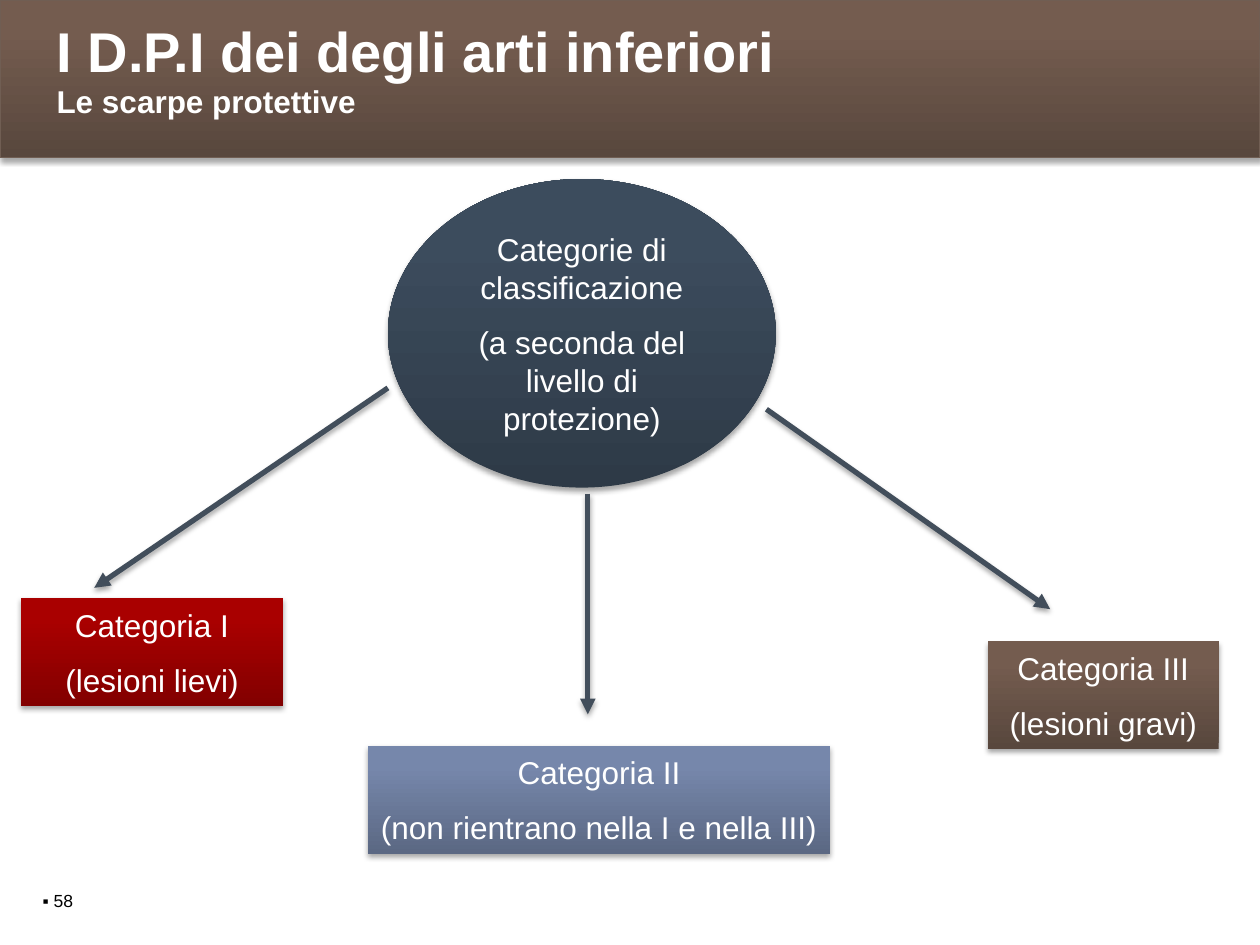
from lxml.etree import SubElement
from pptx import Presentation
from pptx.dml.color import RGBColor
from pptx.enum.shapes import MSO_CONNECTOR, MSO_SHAPE
from pptx.enum.text import MSO_ANCHOR, MSO_AUTO_SIZE, PP_ALIGN
from pptx.oxml.ns import qn
from pptx.util import Cm, Pt

BROWN = ("58473D", "745C4F")
SLATE = ("2E3A47", "3C4C5D")
RED = ("820000", "A90000")
BLUE = ("5B6883", "7687AB")
ARROW = "424E5B"
BODY = dict(name="Arial", size=Pt(18), color="FFFFFF")


def rgb(value):
    return RGBColor.from_string(value)


def set_font(font, **values):
    color = values.pop("color")
    for key, value in values.items():
        setattr(font, key, value)
    font.color.rgb = rgb(color)


def add_shadow(shape):
    """Soft shadow falling straight down."""
    spPr = shape._element.spPr
    effects = spPr.find(qn("a:effectLst"))
    if effects is None:
        effects = SubElement(spPr, qn("a:effectLst"))
    outer = SubElement(effects, qn("a:outerShdw"), blurRad=str(Pt(3.1)),
                       dist=str(Pt(1.8)), dir="5400000", rotWithShape="0")
    color = SubElement(outer, qn("a:srgbClr"), val="000000")
    SubElement(color, qn("a:alpha"), val="35000")


def add_panel(s, kind, box, colors):
    """Shape shaded from a dark bottom to a light top."""
    sp = s.shapes.add_shape(kind, *map(Cm, box))
    sp.fill.gradient()
    sp.fill.gradient_angle = 90
    for stop, color, position in zip(sp.fill.gradient_stops, colors, (0, 0.8)):
        stop.color.rgb = rgb(color)
        stop.position = position
    sp.line.fill.background()
    sp.shadow.inherit = False
    add_shadow(sp)
    return sp


def add_node(s, kind, box, colors, lines, wrap=True):
    tf = add_panel(s, kind, box, colors).text_frame
    tf.word_wrap = wrap
    tf.vertical_anchor = MSO_ANCHOR.MIDDLE
    for i, line in enumerate(lines):
        p = tf.add_paragraph() if i else tf.paragraphs[0]
        p.alignment = PP_ALIGN.CENTER
        p.space_before = Pt(10 if i else 0)
        r = p.add_run()
        r.text = line
        set_font(r.font, **BODY)


def add_arrow(s, start, end):
    line = s.shapes.add_connector(MSO_CONNECTOR.STRAIGHT, *map(Cm, start + end))
    line.line.color.rgb = rgb(ARROW)
    line.line.width = Pt(3)
    SubElement(line.line._get_or_add_ln(), qn("a:tailEnd"), type="triangle")
    add_shadow(line)


def add_header(s, box, title, subtitle):
    x, y, w, h = box
    band = add_panel(s, MSO_SHAPE.RECTANGLE, box, BROWN)
    band.line.color.rgb = rgb("705E53")
    band.line.width = Pt(0.75)
    s.shapes._spTree.insert(2, band._element)  # behind the title

    sp = s.shapes.title
    sp.left, sp.top, sp.width, sp.height = map(Cm, (x + 0.94, y + 0.3, w - 1.73, 1.45))
    tf = sp.text_frame
    frame = dict(margin_left=Cm(0.2), margin_right=Cm(0.2), margin_top=Cm(0.13),
                 margin_bottom=Cm(0.13), word_wrap=True,
                 auto_size=MSO_AUTO_SIZE.NONE, vertical_anchor=MSO_ANCHOR.TOP)
    for key, value in frame.items():
        setattr(tf, key, value)
    p = tf.paragraphs[0]
    p.alignment = PP_ALIGN.LEFT
    p.line_spacing = 0.95
    for text, size in ((title, 32), (subtitle, 18)):
        if p.runs:
            p.add_line_break()
        r = p.add_run()
        r.text = text
        set_font(r.font, **{**BODY, "size": Pt(size), "bold": True})


def add_category_tree(s, x, y):
    """Hub with three arrows fanning out to the categories."""
    add_node(s, MSO_SHAPE.OVAL, (x + 7.4, y, 7.82, 6.22), SLATE,
             ("Categorie di classificazione", "(a seconda del livello di protezione)"))
    for x1, y1, x2, y2 in ((7.4, 4.21, 1.48, 8.24),
                           (11.43, 6.34, 11.43, 10.79),
                           (15.03, 4.64, 20.75, 8.67)):
        add_arrow(s, (x + x1, y + y1), (x + x2, y + y2))
    categories = (
        (0, 8.45, 5.29, RED, "I", "(lesioni lievi)", True),
        (6.99, 11.42, 9.33, BLUE, "II", "(non rientrano nella I e nella III)", False),
        (19.49, 9.32, 4.66, BROWN, "III", "(lesioni gravi)", True),
    )
    for dx, dy, w, colors, number, note, wrap in categories:
        add_node(s, MSO_SHAPE.RECTANGLE, (x + dx, y + dy, w, 2.18), colors,
                 (f"Categoria {number}", note), wrap)


def add_page_number(s, box, text):
    tf = s.shapes.add_textbox(*map(Cm, box)).text_frame
    tf.word_wrap = True
    r = tf.paragraphs[0].add_run()
    r.text = text
    set_font(r.font, name="Arial", size=Pt(10), color="000000")


def main():
    prs = Presentation()
    prs.slide_width, prs.slide_height = Cm(25.4), Cm(19.05)
    s = prs.slides.add_slide(prs.slide_layouts[5])
    add_header(s, (0, 0, 25.4, 3.18), "I D.P.I dei degli arti inferiori",
               "Le scarpe protettive")
    add_category_tree(s, 0.42, 3.61)
    add_page_number(s, (0.61, 17.81, 3.73, 0.69), "▪ 58")
    prs.save("out.pptx")


if __name__ == "__main__":
    main()
